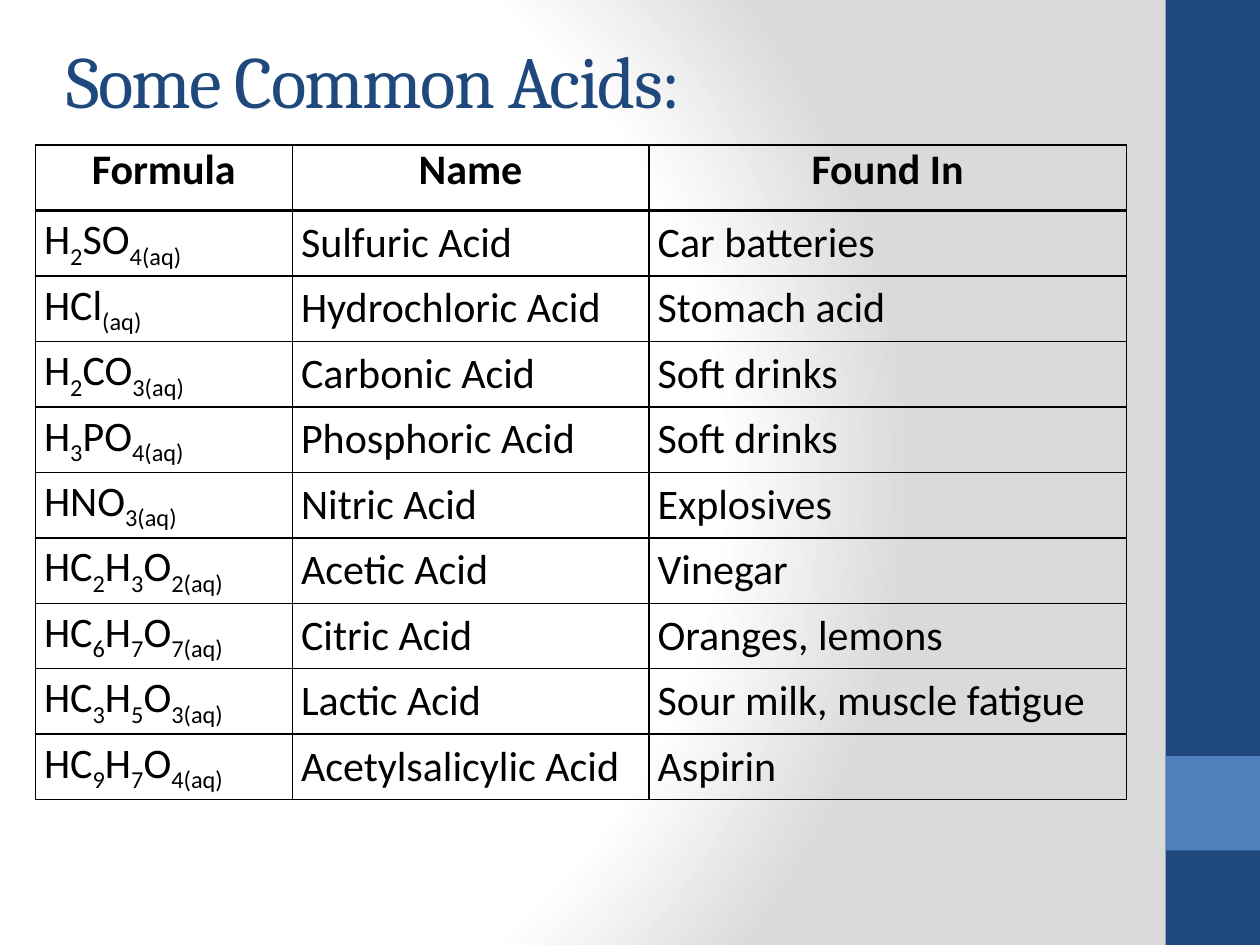
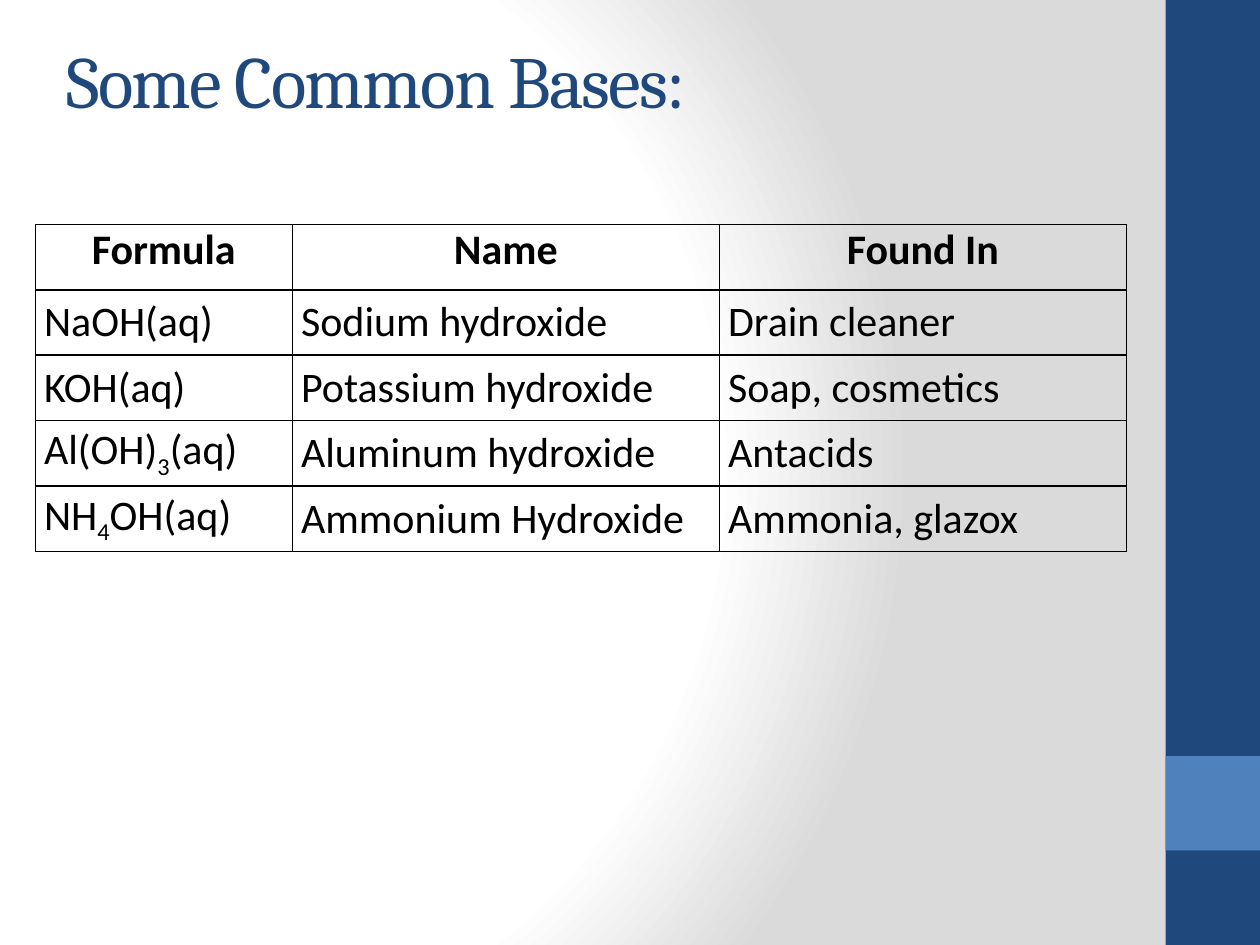
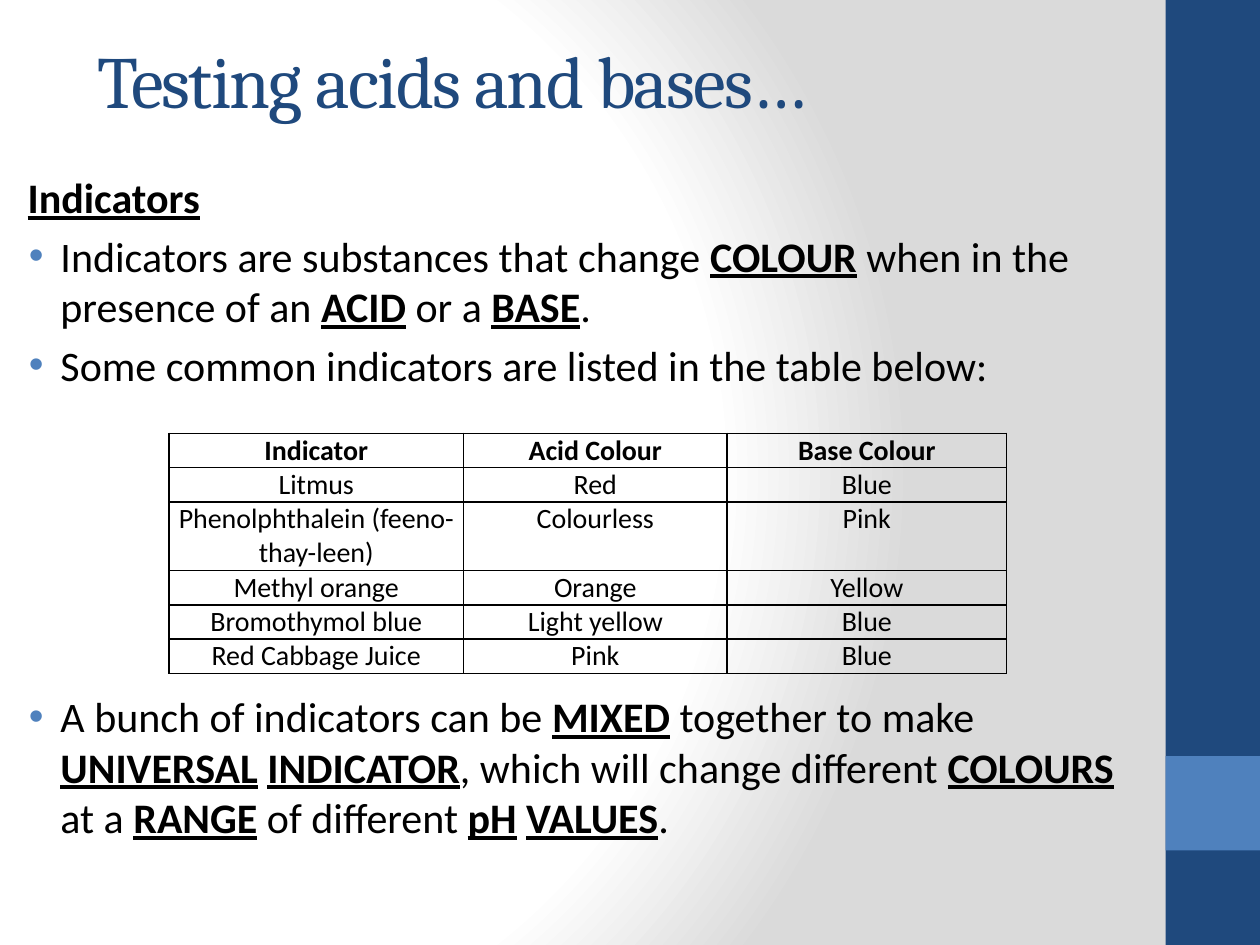
from dataclasses import dataclass

from lxml import etree
from pptx import Presentation
from pptx.dml.color import RGBColor
from pptx.enum.shapes import MSO_SHAPE
from pptx.enum.text import MSO_ANCHOR, MSO_AUTO_SIZE, PP_ALIGN
from pptx.oxml import parse_xml
from pptx.oxml.ns import nsdecls, qn
from pptx.util import Inches, Pt

RECTANGLE = MSO_SHAPE.RECTANGLE
TOP, MIDDLE = MSO_ANCHOR.TOP, MSO_ANCHOR.MIDDLE
LEFT, CENTER = PP_ALIGN.LEFT, PP_ALIGN.CENTER
NO_AUTOFIT = MSO_AUTO_SIZE.NONE


@dataclass(frozen=True)
class Theme:
    navy: str = "1F497D"
    blue: str = "4F81BD"
    black: str = "000000"
    white: str = "FFFFFF"
    gray: str = "DADADA"
    title_font: str = "Cambria"
    body_font: str = "Calibri"
    title_size: int = 42
    body_size: int = 24
    small_size: int = 16
    thin_line: float = 1
    thick_line: float = 1.5


THEME = Theme()


def write(paragraph, text, size, font=THEME.body_font, color=THEME.black):
    """Write text whose marked parts stand between underscores; return the marked runs."""
    paragraph.font.name = font
    paragraph.font.size = Pt(size)
    paragraph.font.color.rgb = RGBColor.from_string(color)
    marked_runs = []
    for index, part in enumerate(text.split("_")):
        if part:
            run = paragraph.add_run()
            run.text = part
            if index % 2:
                marked_runs.append(run)
    return marked_runs


def add_grid(slide, left, top, column_widths, row_height, rows, size,
             header_line=THEME.thin_line, body_align=LEFT, body_anchor=MIDDLE):
    """Add an unfilled table with black rules; underscores mark subscripts."""
    frame = slide.shapes.add_table(
        len(rows), len(column_widths), Inches(left), Inches(top),
        Inches(sum(column_widths)), Inches(row_height * len(rows)))
    table = frame.table
    table.first_row = table.horz_banding = False
    for column, width in zip(table.columns, column_widths):
        column.width = Inches(width)
    for row_index, (row, texts) in enumerate(zip(table.rows, rows)):
        row.height = Inches(row_height)
        is_header = row_index == 0
        line_widths = dict.fromkeys(("lnL", "lnR", "lnT", "lnB"), THEME.thin_line)
        if is_header:
            line_widths["lnB"] = header_line
        elif row_index == 1:
            line_widths["lnT"] = header_line
        for cell, text in zip(row.cells, texts):
            cell.margin_left = cell.margin_right = Inches(0.07)
            cell.margin_top = cell.margin_bottom = 0
            cell.vertical_anchor = TOP if is_header else body_anchor
            paragraph = cell.text_frame.paragraphs[0]
            paragraph.alignment = CENTER if is_header else body_align
            paragraph.font.bold = is_header
            for run in write(paragraph, text, size):
                run._r.get_or_add_rPr().set("baseline", "-25000")
            properties = cell._tc.get_or_add_tcPr()
            for side, width in line_widths.items():
                properties.append(parse_xml(
                    f'<a:{side} {nsdecls("a")} w="{Pt(width)}"><a:solidFill>'
                    f'<a:srgbClr val="{THEME.black}"/></a:solidFill></a:{side}>'))
            cell.fill.background()


presentation = Presentation()
presentation.slide_width = Inches(10)
presentation.slide_height = Inches(7.5)
WIDTH, HEIGHT = presentation.slide_width, presentation.slide_height
master = presentation.slide_master
title_only, title_and_content = presentation.slide_layouts[5], presentation.slide_layouts[1]

# Master background: circular gradient
master.background.fill.gradient()
gradient = master.element.find(".//" + qn("p:bgPr") + "/" + qn("a:gradFill"))
stops = "".join(
    f'<a:gs pos="{share * 1000}"><a:srgbClr val="{color}"/></a:gs>'
    for share, color in ((0, THEME.white), (75, THEME.white), (100, THEME.gray)))
gradient.getparent().replace(gradient, parse_xml(
    f'<a:gradFill {nsdecls("a")} rotWithShape="1"><a:gsLst>{stops}</a:gsLst>'
    '<a:path path="circle"><a:fillToRect l="20000" t="50000" r="100000" b="50000"/>'
    '</a:path></a:gradFill>'))

# Master text: tight titles, blue bullets with a short hanging indent
master.element.find(
    ".//" + "/".join(map(qn, ("p:titleStyle", "a:lvl1pPr", "a:defRPr")))).set("spc", "-100")
bullet_level = master.element.find(".//" + qn("p:bodyStyle") + "/" + qn("a:lvl1pPr"))
bullet_level.set("marL", str(Inches(0.38)))
bullet_level.set("indent", str(Inches(-0.25)))
bullet_level.find(qn("a:buFont")).addprevious(parse_xml(
    f'<a:buClr {nsdecls("a")}><a:srgbClr val="{THEME.blue}"/></a:buClr>'))

# Slides and their titles
slides = []
for layout, title_left, title_text in (
        (title_only, 0.43, "Some Common Acids:"),
        (title_only, 0.43, "Some Common Bases:"),
        (title_and_content, 0.67, "Testing acids and bases…")):
    slide = presentation.slides.add_slide(layout)
    title = slide.shapes.title
    title.left, title.top = Inches(title_left), 0
    title.width, title.height = Inches(8.33), Inches(1.25)
    title.text_frame.auto_size = NO_AUTOFIT
    title.text_frame.vertical_anchor = MIDDLE
    paragraph = title.text_frame.paragraphs[0]
    paragraph.alignment = LEFT
    write(paragraph, title_text, THEME.title_size, THEME.title_font, THEME.navy)
    slides.append(slide)
acids_slide, bases_slide, testing_slide = slides

# Side band, moved to the master behind its placeholders
for index, (top, height, color) in enumerate(((0, 1, THEME.navy), (0.8, 0.1, THEME.blue))):
    band = acids_slide.shapes.add_shape(
        RECTANGLE, int(WIDTH * 0.925), int(HEIGHT * top), int(WIDTH * 0.075), int(HEIGHT * height))
    band.shadow.inherit = False
    band.fill.solid()
    band.fill.fore_color.rgb = RGBColor.from_string(color)
    band.line.fill.background()
    band.element.nvSpPr.cNvPr.set("id", str(101 + index))
    master.shapes.element.insert(2 + index, band.element)

# Acids
substance_header = ("Formula", "Name", "Found In")
add_grid(acids_slide, 0.28, 1.15, (2.04, 2.83, 3.79), 0.52, (
    substance_header,
    ("H_2_SO_4(aq)_", "Sulfuric Acid", "Car batteries"),
    ("HCl_(aq)_", "Hydrochloric Acid", "Stomach acid"),
    ("H_2_CO_3(aq)_", "Carbonic Acid", "Soft drinks"),
    ("H_3_PO_4(aq)_", "Phosphoric Acid", "Soft drinks"),
    ("HNO_3(aq)_", "Nitric Acid", "Explosives"),
    ("HC_2_H_3_O_2(aq)_", "Acetic Acid", "Vinegar"),
    ("HC_6_H_7_O_7(aq)_", "Citric Acid", "Oranges, lemons"),
    ("HC_3_H_5_O_3(aq)_", "Lactic Acid", "Sour milk, muscle fatigue"),
    ("HC_9_H_7_O_4(aq)_", "Acetylsalicylic Acid", "Aspirin"),
), THEME.body_size, THEME.thick_line)

# Bases
add_grid(bases_slide, 0.28, 1.78, (2.04, 3.39, 3.23), 0.52, (
    substance_header,
    ("NaOH(aq)", "Sodium hydroxide", "Drain cleaner"),
    ("KOH(aq)", "Potassium hydroxide", "Soap, cosmetics"),
    ("Al(OH)_3_(aq)", "Aluminum hydroxide", "Antacids"),
    ("NH_4_OH(aq)", "Ammonium Hydroxide", "Ammonia, glazox"),
), THEME.body_size, THEME.thick_line)

# Indicators: text with underlined key words
body = testing_slide.placeholders[1]
body.left, body.top = 0, Inches(1.31)
body.width, body.height = int(WIDTH * 0.925), Inches(6.19)
text_frame = body.text_frame
text_frame.auto_size = NO_AUTOFIT
heading = text_frame.paragraphs[0]
heading_properties = heading._p.get_or_add_pPr()
heading_properties.set("marL", str(Inches(0.12)))
heading_properties.set("indent", "0")
etree.SubElement(heading_properties, qn("a:buNone"))
paragraphs = [heading] + [text_frame.add_paragraph() for _ in range(3)]
for paragraph, text in zip(paragraphs, (
        "_Indicators_",
        "Indicators are substances that change _COLOUR_ when in the presence of "
        "an _ACID_ or a _BASE_.",
        "Some common indicators are listed in the table below:",
        "A bunch of indicators can be _MIXED_ together to make _UNIVERSAL_ _INDICATOR_, "
        "which will change different _COLOURS_ at a _RANGE_ of different _pH_ _VALUES_.")):
    for run in write(paragraph, text, THEME.body_size):
        run.font.bold = run.font.underline = True
paragraphs[-1].space_before = Pt(172)  # room for the table

# Indicators: table
add_grid(testing_slide, 1.34, 3.44, (2.34, 2.09, 2.22), 0.27, (
    ("Indicator", "Acid Colour", "Base Colour"),
    ("Litmus", "Red", "Blue"),
    ("Phenolphthalein (feeno-thay-leen)", "Colourless", "Pink"),
    ("Methyl orange", "Orange", "Yellow"),
    ("Bromothymol blue", "Light yellow", "Blue"),
    ("Red Cabbage Juice", "Pink", "Blue"),
), THEME.small_size, body_align=CENTER, body_anchor=TOP)

presentation.save("out.pptx")
